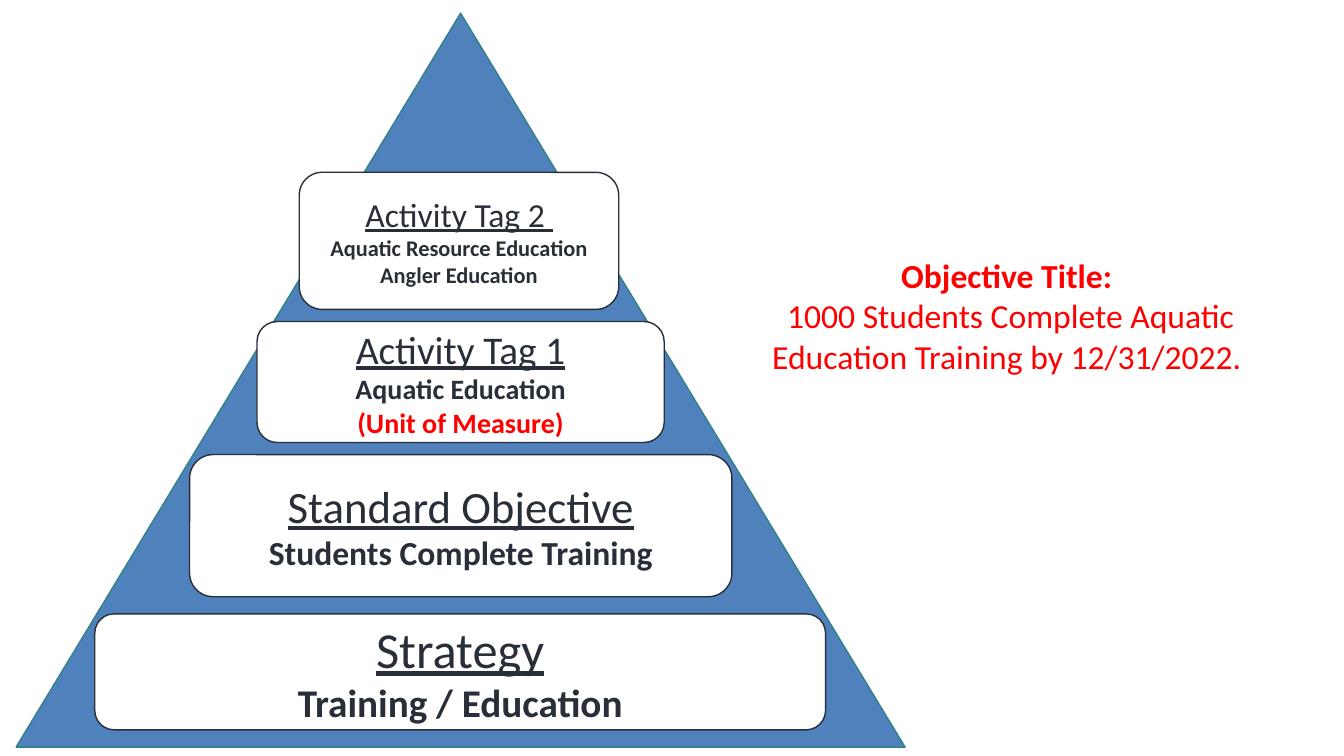
from dataclasses import dataclass

from pptx import Presentation
from pptx.dml.color import RGBColor
from pptx.enum.shapes import MSO_SHAPE
from pptx.enum.text import MSO_ANCHOR, PP_ALIGN
from pptx.util import Pt

TRIANGLE = MSO_SHAPE.ISOSCELES_TRIANGLE
ROUNDED = MSO_SHAPE.ROUNDED_RECTANGLE
CENTER = PP_ALIGN.CENTER
MIDDLE = MSO_ANCHOR.MIDDLE


@dataclass(frozen=True)
class Theme:
    font: str = "Calibri"
    pyramid: str = "4F81BD"
    pyramid_edge: str = "318187"
    card: str = "FFFFFF"
    ink: str = "282F39"
    accent: str = "FF0000"
    callout_size: int = 24
    # (heading, detail) sizes from the base of the pyramid up
    level_sizes: tuple = ((36, 28), (32, 24), (28, 20), (24, 16))


THEME = Theme()

# Card box (left, top, width, height) relative to the pyramid, heading, details
LEVELS = [
    ((56.2, 429.1, 522, 82.8), "Strategy", [("Training / Education", THEME.ink)]),
    ((123.9, 315.3, 387.4, 101.5), "Standard Objective",
     [("Students Complete Training", THEME.ink)]),
    ((172.1, 220.3, 290.9, 86.4), "Activity Tag 1",
     [("Aquatic Education", THEME.ink), ("(Unit of Measure)", THEME.accent)]),
    ((202.3, 113.7, 228.2, 97.9), "Activity Tag 2 ",
     [("Aquatic Resource Education", THEME.ink), ("Angler Education", THEME.ink)]),
]


def add_text(tf, text, *, size, color=THEME.ink, bold=False, underline=False):
    """Append a centred paragraph, using the empty first one if there is one."""
    p = tf.paragraphs[0] if not tf.text else tf.add_paragraph()
    p.alignment = CENTER
    r = p.add_run()
    r.text = text
    r.font.name = THEME.font
    r.font.size = Pt(size)
    r.font.bold = bold
    r.font.underline = underline
    r.font.color.rgb = RGBColor.from_string(color)


def add_outlined(s, kind, box, fill, line):
    sp = s.shapes.add_shape(kind, *map(Pt, box))
    sp.shadow.inherit = False
    sp.fill.solid()
    sp.fill.fore_color.rgb = RGBColor.from_string(fill)
    sp.line.color.rgb = RGBColor.from_string(line)
    sp.line.width = Pt(1)
    return sp


def add_card(s, box, heading, details, sizes):
    heading_size, detail_size = sizes
    sp = add_outlined(s, ROUNDED, box, THEME.card, THEME.ink)
    tf = sp.text_frame
    tf.word_wrap = True
    tf.vertical_anchor = MIDDLE
    add_text(tf, heading, size=heading_size, underline=True)
    for text, color in details:
        add_text(tf, text, size=detail_size, color=color, bold=True)


def add_pyramid(s, box):
    left, top = box[:2]
    add_outlined(s, TRIANGLE, box, THEME.pyramid, THEME.pyramid_edge)
    for ((dx, dy, w, h), heading, details), sizes in zip(LEVELS, THEME.level_sizes):
        add_card(s, (left + dx, top + dy, w, h), heading, details, sizes)


def add_callout(s, box):
    tf = s.shapes.add_textbox(*map(Pt, box)).text_frame
    tf.word_wrap = True
    add_text(tf, "Objective Title: ", size=THEME.callout_size,
             color=THEME.accent, bold=True)
    add_text(tf, "1000 Students Complete Aquatic Education Training by 12/31/2022. ",
             size=THEME.callout_size, color=THEME.accent)


def main():
    prs = Presentation()
    prs.slide_width, prs.slide_height = Pt(960), Pt(540)
    s = prs.slides.add_slide(prs.slide_layouts[6])
    add_callout(s, (514.8, 178.6, 414, 94.3))
    add_pyramid(s, (11.5, 9.4, 635, 524.2))
    prs.save("out.pptx")


if __name__ == "__main__":
    main()
